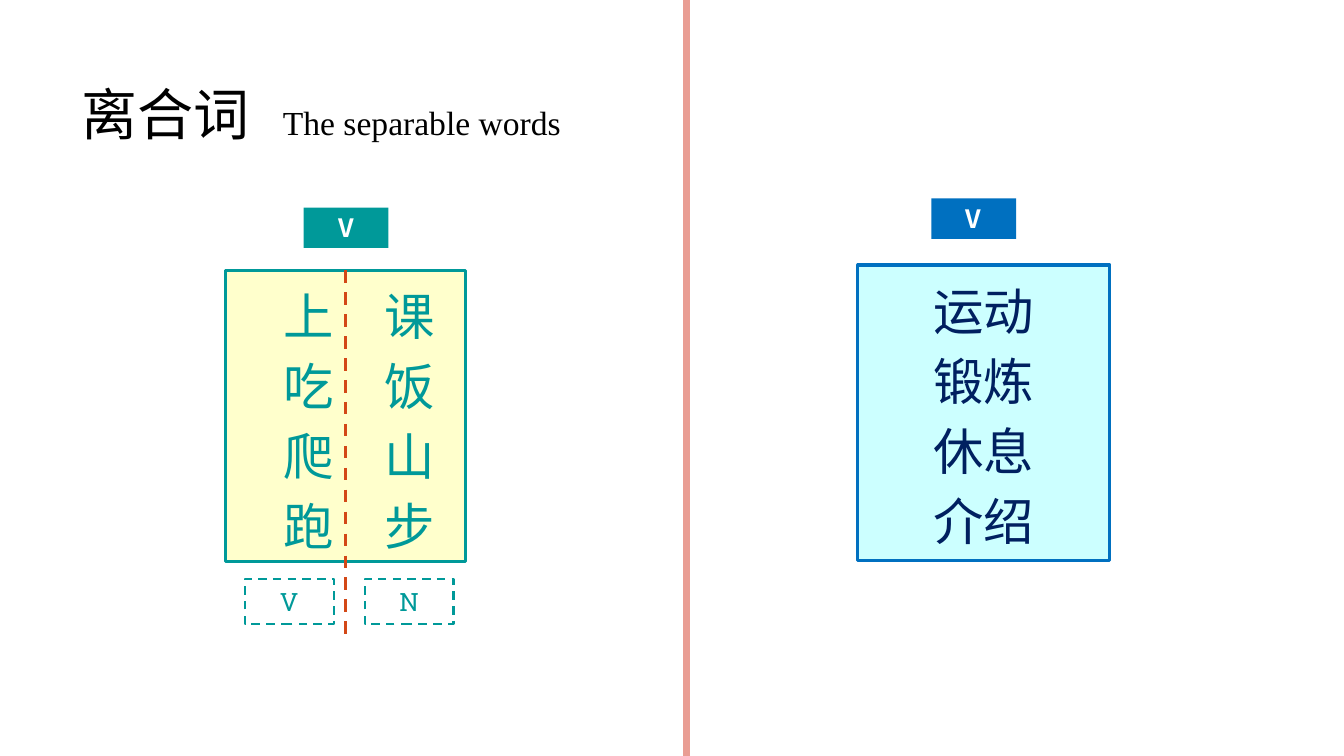
from lxml import etree
from pptx import Presentation
from pptx.dml.color import RGBColor
from pptx.enum.dml import MSO_LINE
from pptx.enum.shapes import MSO_CONNECTOR, MSO_SHAPE
from pptx.enum.text import MSO_ANCHOR, MSO_AUTO_SIZE, PP_ALIGN
from pptx.oxml.ns import qn
from pptx.util import Cm, Pt

# Content
TITLE = ("离合词", "The separable words")
SEPARABLE_WORDS = [("上", "课"), ("吃", "饭"), ("爬", "山"), ("跑", "步")]
WHOLE_WORDS = ["运动", "锻炼", "休息", "介绍"]
PART_LABELS = ["V", "N"]

# Look
BLACK = RGBColor(0x00, 0x00, 0x00)
WHITE = RGBColor(0xFF, 0xFF, 0xFF)
TEAL = RGBColor(0x00, 0x99, 0x99)
CREAM = RGBColor(0xFF, 0xFF, 0xCC)
BLUE = RGBColor(0x00, 0x70, 0xC0)
NAVY = RGBColor(0x00, 0x20, 0x60)
PALE_CYAN = RGBColor(0xCC, 0xFF, 0xFF)
SALMON = RGBColor(0xE9, 0x9D, 0x93)
RUST = RGBColor(0xD3, 0x48, 0x17)
CHINESE_FONT = "Noto Sans CJK SC"
LABEL_FONT = "Roboto Slab"
TITLE_FONT = "Times New Roman"
LEFT, CENTER = PP_ALIGN.LEFT, PP_ALIGN.CENTER
TOP, MIDDLE = MSO_ANCHOR.TOP, MSO_ANCHOR.MIDDLE
DASH = MSO_LINE.DASH
RECTANGLE = MSO_SHAPE.RECTANGLE

# Positions in centimetres
SLIDE_WIDTH, SLIDE_HEIGHT = 33.87, 19.05
SEPARABLE_BOX = (5.69, 6.81, 6.05, 7.34)
WHOLE_BOX = (21.62, 6.68, 6.35, 7.44)
TAG_WIDTH, TAG_HEIGHT = 2.14, 1.02
PART_WIDTH, PART_HEIGHT, PART_STEP = 2.24, 1.14, 3.02
PART_LEFT, PART_TOP = 6.17, 14.58


def place(shape, left, top, width, height):
    shape.left, shape.top = Cm(left), Cm(top)
    shape.width, shape.height = Cm(width), Cm(height)


def paint(shape, fill=None, line=None, width=1.5, dash=None):
    if fill is None:
        shape.fill.background()
    else:
        shape.fill.solid()
        shape.fill.fore_color.rgb = fill
    if line is None:
        shape.line.fill.background()
    else:
        shape.line.color.rgb = line
        shape.line.width = Pt(width)
        if dash is not None:
            shape.line.dash_style = dash


def write(shape, lines, fonts=(CHINESE_FONT,), sizes=(18,), color=BLACK,
          bold=False, align=CENTER, anchor=TOP, spacing=None, tab=None,
          margin_left=0.25):
    """Write lines, each a list of runs; tab is the position of later runs."""
    frame = shape.text_frame
    frame.word_wrap = True
    frame.auto_size = MSO_AUTO_SIZE.NONE
    frame.vertical_anchor = anchor
    frame.margin_left, frame.margin_right = Cm(margin_left), Cm(0.25)
    frame.margin_top = frame.margin_bottom = Cm(0.13)
    for index, texts in enumerate(lines):
        paragraph = frame.paragraphs[0] if index == 0 else frame.add_paragraph()
        paragraph.alignment = align
        paragraph.space_before = paragraph.space_after = Pt(0)
        if spacing:
            paragraph.line_spacing = Pt(spacing)
        properties = paragraph._p.get_or_add_pPr()
        properties.set("marL", "0")
        properties.set("indent", "0")
        etree.SubElement(properties, qn("a:buNone"))
        if tab:
            tabs = etree.SubElement(properties, qn("a:tabLst"))
            etree.SubElement(tabs, qn("a:tab"), pos=str(Cm(tab)), algn="l")
        for position, text in enumerate(texts):
            run = paragraph.add_run()
            run.text = "\t" + text if position else text
            run.font.name = fonts[position % len(fonts)]
            run.font.size = Pt(sizes[position % len(sizes)])
            run.font.bold = bold
            run.font.color.rgb = color
            latin = run._r.rPr.find(qn("a:latin"))
            east_asian = etree.Element(qn("a:ea"), typeface=run.font.name)
            latin.addnext(east_asian)


def add_box(slide, place_at, **look):
    shape = slide.shapes.add_shape(RECTANGLE, *(Cm(value) for value in place_at))
    shape.shadow.inherit = False
    paint(shape, **look)
    return shape


def add_line(slide, x, top, bottom, color, width, dash=None):
    line = slide.shapes.add_connector(
        MSO_CONNECTOR.STRAIGHT, Cm(x), Cm(top), Cm(x), Cm(bottom))
    line.line.color.rgb = color
    line.line.width = Pt(width)
    if dash is not None:
        line.line.dash_style = dash
    etree.SubElement(line._element.spPr, qn("a:effectLst"))
    return line


def main():
    presentation = Presentation()
    presentation.slide_width = Cm(SLIDE_WIDTH)
    presentation.slide_height = Cm(SLIDE_HEIGHT)
    slide = presentation.slides.add_slide(presentation.slide_layouts[1])

    # Title in two languages
    title = slide.shapes.title
    place(title, 1.8, 1.98, 13.82, 1.85)
    write(title, [TITLE], fonts=(CHINESE_FONT, TITLE_FONT), sizes=(40, 24),
          align=LEFT, spacing=45, tab=6.12)

    # Word boxes
    separable = slide.placeholders[1]
    place(separable, *SEPARABLE_BOX)
    paint(separable, fill=CREAM, line=TEAL, width=2.25)
    write(separable, SEPARABLE_WORDS, sizes=(36,), color=TEAL, align=LEFT,
          spacing=50, tab=1.85, margin_left=1.46)
    whole = add_box(slide, WHOLE_BOX, fill=PALE_CYAN, line=BLUE, width=2.25)
    write(whole, [[word] for word in WHOLE_WORDS], sizes=(36,), color=NAVY,
          spacing=50)

    # Divider between the two halves
    add_line(slide, 17.3, 0, SLIDE_HEIGHT, SALMON, 4.5)

    # Verb tags above the boxes
    for left, top, color in [(7.65, 5.23, TEAL), (23.47, 5, BLUE)]:
        tag = add_box(slide, (left, top, TAG_WIDTH, TAG_HEIGHT), fill=color)
        write(tag, [["V"]], color=WHITE, bold=True)

    # Split line through the separable words
    box_left, box_top, box_width, _ = SEPARABLE_BOX
    split = add_line(slide, box_left + box_width / 2, box_top, 16.03,
                     RUST, 2.25, DASH)
    split.begin_connect(separable, 0)

    # Part labels below the split words
    for index, label in enumerate(PART_LABELS):
        left = PART_LEFT + index * PART_STEP
        part = add_box(slide, (left, PART_TOP, PART_WIDTH, PART_HEIGHT),
                       line=TEAL, dash=DASH)
        write(part, [[label]], fonts=(LABEL_FONT,), color=TEAL, anchor=MIDDLE)

    presentation.save("out.pptx")


if __name__ == "__main__":
    main()
